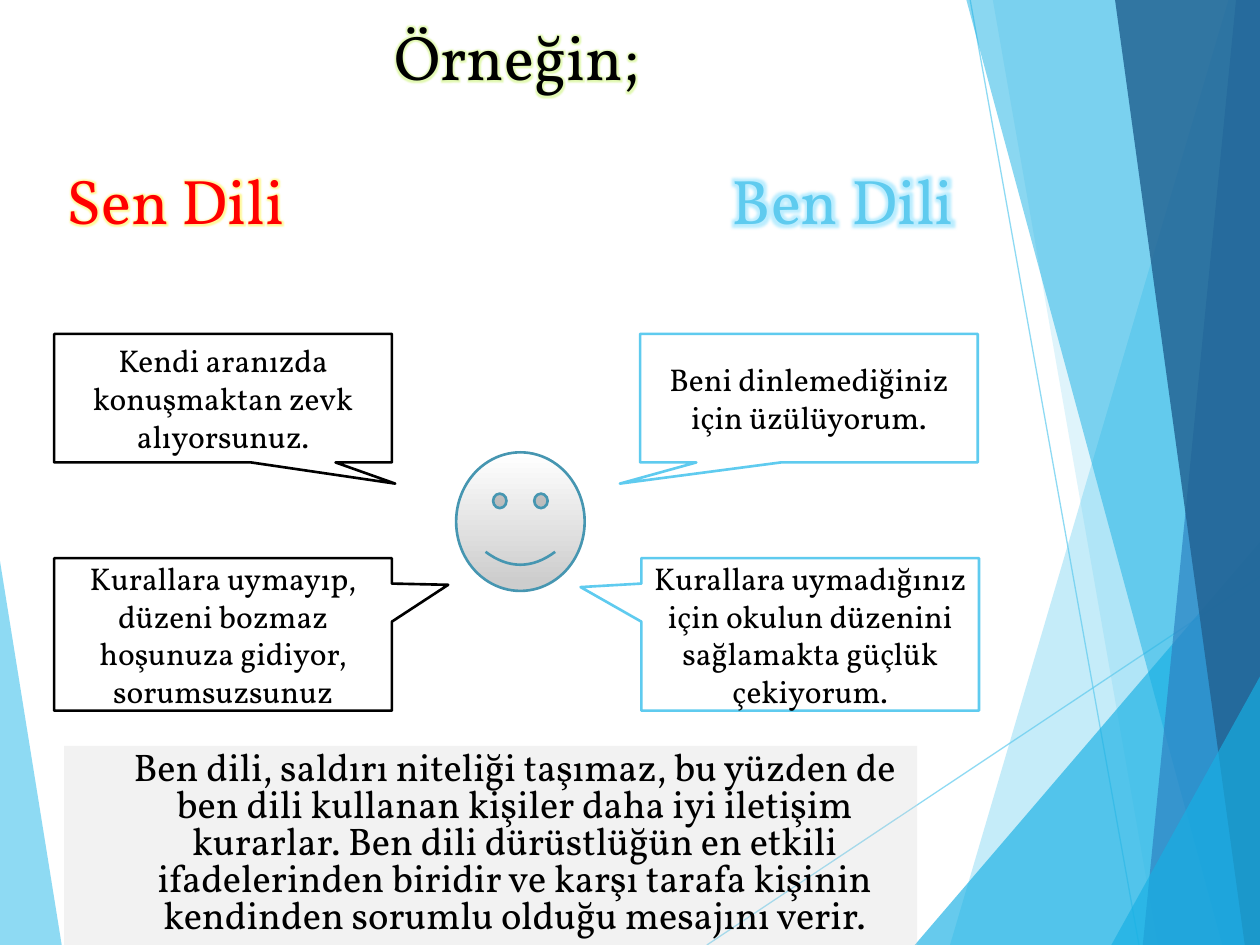
from lxml.etree import SubElement
from pptx import Presentation
from pptx.dml.color import RGBColor
from pptx.enum.shapes import MSO_CONNECTOR, MSO_SHAPE
from pptx.enum.text import MSO_ANCHOR, MSO_AUTO_SIZE, PP_ALIGN
from pptx.oxml.ns import qn
from pptx.util import Inches, Pt

FONT = "Vollkorn"
BLACK = RGBColor(0, 0, 0)
WHITE = RGBColor(0xFF, 0xFF, 0xFF)
RED = RGBColor(0xFF, 0, 0)
SKY = RGBColor(0x5F, 0xCB, 0xEF)
CYAN = RGBColor(0x17, 0xB0, 0xE4)
BLUE = RGBColor(0x2E, 0x83, 0xC3)
NAVY = RGBColor(0x22, 0x62, 0x92)
TEAL = RGBColor(0x46, 0x96, 0xB1)
GREY = RGBColor(0xD9, 0xD9, 0xD9)
FACE_SHADE = RGBColor(0xCD, 0xCD, 0xCD)
LIME_GLOW = RGBColor(0xD0, 0xF5, 0x80)
YELLOW_GLOW = RGBColor(0xFF, 0xF5, 0x60)
SKY_GLOW = RGBColor(0x8F, 0xE2, 0xFF)

# Content: text, left, top, colour, glow colour, glow radius in points
TITLE = ("Örneğin;", 3.03, 0.09, BLACK, LIME_GLOW, 4)
LABELS = [
    ("Sen Dili", 0.43, 1.23, RED, YELLOW_GLOW, 4),
    ("Ben Dili", 5.71, 1.23, SKY, SKY_GLOW, 8),
]
# Text, left, top, height, line colour, pointer offset
CALLOUTS = [
    ("Kendi aranızda konuşmaktan zevk alıyorsunuz.",
     0.43, 2.65, 1.02, BLACK, (0.51, 0.665)),
    ("Beni dinlemediğiniz için üzülüyorum.",
     5.08, 2.65, 1.02, SKY, (-0.56, 0.665)),
    ("Kurallara uymayıp, düzeni bozmaz hoşunuza gidiyor, sorumsuzsunuz",
     0.43, 4.43, 1.21, BLACK, (0.667, -0.325)),
    ("Kurallara uymadığınız için okulun düzenini sağlamakta güçlük çekiyorum.",
     5.09, 4.43, 1.21, SKY, (-0.68, -0.31)),
]
SUMMARY = ("Ben dili, saldırı niteliği taşımaz, bu yüzden de ben dili kullanan "
           "kişiler daha iyi iletişim kurarlar. Ben dili dürüstlüğün en etkili "
           "ifadelerinden biridir ve karşı tarafa kişinin kendinden sorumlu "
           "olduğu mesajını verir.")

# Backdrop: corners, colour, opacity in percent
LEFT_SHARD = ([(-0.01, 4.39), (0.49, 7.5), (-0.01, 7.5)], SKY, 70)
RAYS = [((5.61, 7.5), (10.01, 4.57)), ((7.7, 0), (9.04, 7.5))]
RIGHT_SHARDS = [
    ([(9.75, 0), (7.54, 7.5), (10.01, 7.5), (10.01, 0)], SKY, 36),
    ([(7.88, 0), (9.19, 7.5), (10.01, 7.5), (10.01, 0)], SKY, 20),
    ([(7.26, 7.5), (10.01, 4.29), (10.01, 7.5)], CYAN, 66),
    ([(7.67, 0), (9.7, 7.5), (10.01, 7.5), (10.01, 0)], CYAN, 50),
    ([(9.81, 0), (9.07, 7.5), (10.01, 7.5), (10.01, 0)], BLUE, 70),
    ([(8.85, 0), (9.88, 7.5), (10.01, 7.5), (10.01, 0)], NAVY, 82),
    ([(8.82, 7.5), (10.01, 5.35), (10.01, 7.5)], CYAN, 66),
]

prs = Presentation()
prs.slide_width, prs.slide_height = Inches(10), Inches(7.5)
slide = prs.slides.add_slide(prs.slide_layouts[5])
shapes = slide.shapes


def set_opacity(shape, percent):
    color = shape._element.spPr.find(".//" + qn("a:srgbClr"))
    SubElement(color, qn("a:alpha")).set("val", str(percent * 1000))


def fill_plain(shape, color, opacity):
    shape.shadow.inherit = False
    shape.fill.solid()
    shape.fill.fore_color.rgb = color
    set_opacity(shape, opacity)
    shape.line.fill.background()


def add_shard(corners, color, opacity):
    points = [(Inches(x), Inches(y)) for x, y in corners]
    builder = shapes.build_freeform(*points[0])
    builder.add_line_segments(points[1:], close=True)
    fill_plain(builder.convert_to_shape(), color, opacity)


def add_ray(start, end):
    ray = shapes.add_connector(MSO_CONNECTOR.STRAIGHT,
                               *(Inches(v) for v in start + end))
    ray.line.color.rgb = SKY
    ray.line.width = Pt(0.75)
    set_opacity(ray, 70)
    SubElement(ray._element.spPr, qn("a:effectLst"))


def add_block(kind, left, top, width, height):
    return shapes.add_shape(kind, *(Inches(v) for v in (left, top, width, height)))


def write(shape, text, size, color, align, anchor):
    frame = shape.text_frame
    frame.word_wrap = True
    frame.auto_size = MSO_AUTO_SIZE.NONE
    frame.vertical_anchor = anchor
    paragraph = frame.paragraphs[0]
    paragraph.text = text
    paragraph.alignment = align
    font = paragraph.font
    font.name, font.size = FONT, Pt(size)
    font.color.rgb = color
    return paragraph


def write_heading(shape, text, left, top, color, glow_color, radius):
    shape.left, shape.top = Inches(left), Inches(top)
    shape.width, shape.height = Inches(2.2), Inches(0.71)
    paragraph = write(shape, text, 36, color, PP_ALIGN.LEFT, MSO_ANCHOR.TOP)
    effects = SubElement(paragraph.runs[0]._r.get_or_add_rPr(), qn("a:effectLst"))
    glow = SubElement(effects, qn("a:glow"), rad=str(Pt(radius)))
    tint = SubElement(glow, qn("a:srgbClr"), val=str(glow_color))
    SubElement(tint, qn("a:alpha"), val="60000")


# Backdrop
add_shard(*LEFT_SHARD)
for ray_ends in RAYS:
    add_ray(*ray_ends)
for shard in RIGHT_SHARDS:
    add_shard(*shard)

# Summary panel
panel = add_block(MSO_SHAPE.RECTANGLE, 0.51, 5.92, 6.77, 1.58)
fill_plain(panel, GREY, 32)
summary = write(panel, SUMMARY, 22, BLACK, PP_ALIGN.CENTER, MSO_ANCHOR.TOP)
summary.line_spacing = 0.8
summary._p.get_or_add_pPr().set("marL", str(Inches(0.38)))

# Title and column labels
write_heading(shapes.title, *TITLE)
for label in LABELS:
    write_heading(shapes.add_textbox(0, 0, 0, 0), *label)

# Smiling face
face = add_block(MSO_SHAPE.SMILEY_FACE, 3.62, 3.59, 1.02, 1.1)
face.shadow.inherit = False
face.fill.gradient()
face.fill.gradient_angle = 270
for stop, color, position in zip(face.fill.gradient_stops,
                                 (WHITE, FACE_SHADE), (0, 0.94)):
    stop.color.rgb = color
    stop.position = position
face.line.color.rgb = TEAL
face.line.width = Pt(1.5)

# Speech callouts
for text, left, top, height, color, pointer in CALLOUTS:
    callout = add_block(MSO_SHAPE.RECTANGULAR_CALLOUT, left, top, 2.68, height)
    callout.shadow.inherit = False
    callout.adjustments[0], callout.adjustments[1] = pointer
    callout.fill.solid()
    callout.fill.fore_color.rgb = WHITE
    callout.line.color.rgb = color
    callout.line.width = Pt(1.5)
    write(callout, text, 18, BLACK, PP_ALIGN.CENTER, MSO_ANCHOR.MIDDLE)

prs.save("out.pptx")
